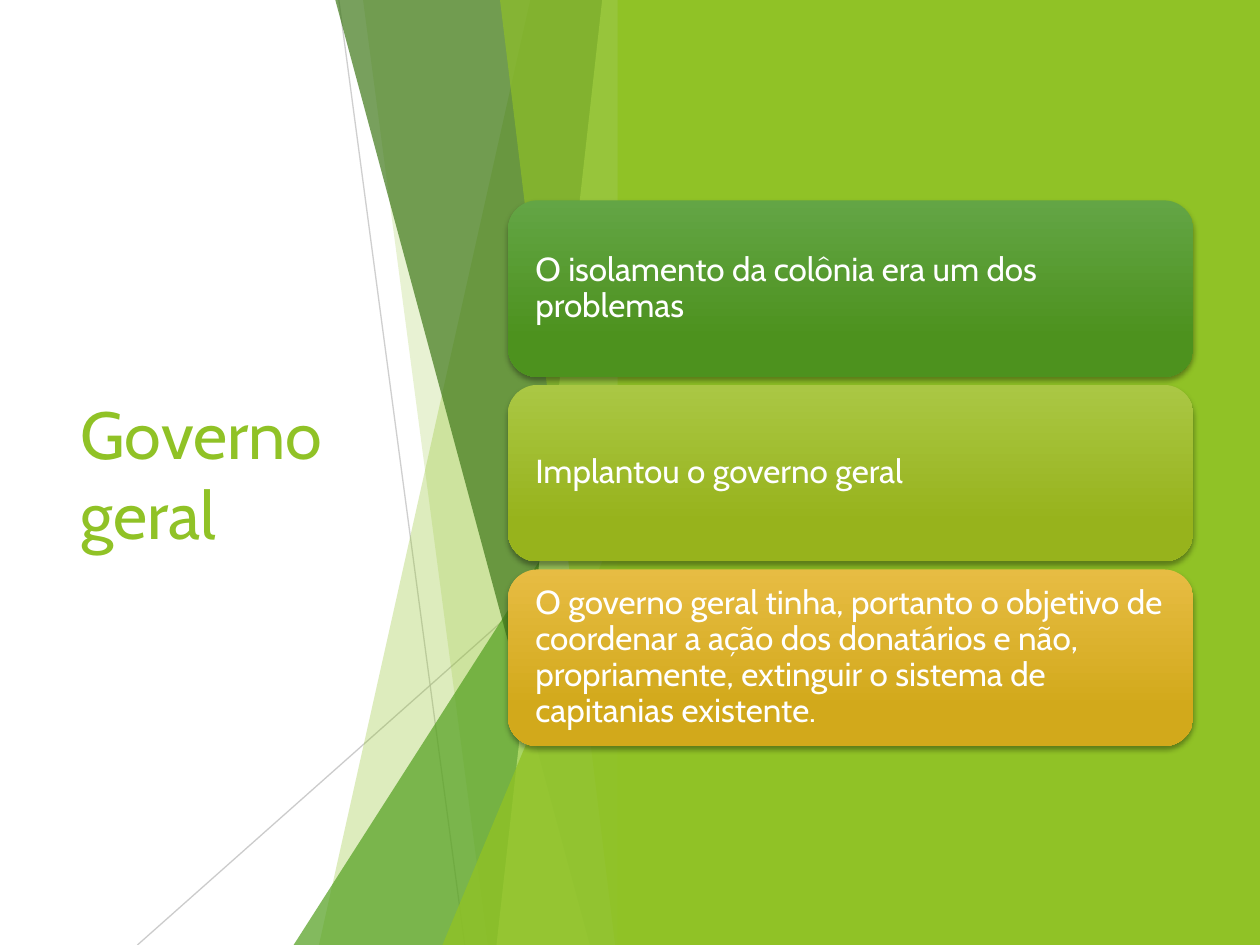
from lxml import etree
from pptx import Presentation
from pptx.dml.color import RGBColor
from pptx.enum.shapes import MSO_CONNECTOR, MSO_SHAPE
from pptx.enum.text import MSO_ANCHOR, MSO_AUTO_SIZE, PP_ALIGN
from pptx.oxml.ns import qn
from pptx.util import Cm, Pt

RECT, ROUND = MSO_SHAPE.RECTANGLE, MSO_SHAPE.ROUNDED_RECTANGLE
WEDGE, LINE = MSO_SHAPE.RIGHT_TRIANGLE, MSO_CONNECTOR.STRAIGHT
WEDGE = MSO_SHAPE.ISOSCELES_TRIANGLE
MIDDLE, LEFT, FIXED = MSO_ANCHOR.MIDDLE, PP_ALIGN.LEFT, MSO_AUTO_SIZE.NONE

WHITE = RGBColor(0xFF, 0xFF, 0xFF)
GREY = RGBColor(0xBF, 0xBF, 0xBF)
LIME = RGBColor(0x90, 0xC2, 0x26)
LEAF = RGBColor(0x54, 0xA0, 0x21)
DARK = RGBColor(0x3F, 0x78, 0x19)
PALE = RGBColor(0xC0, 0xE4, 0x74)
FONT = "Cabin"
WIDE, HIGH, EDGE = 25.4, 19.05, 12.7


def fade(fill, alpha):
    """Make a solid fill (of a shape or a line) see-through; alpha in percent."""
    tint = fill._xPr.find(qn("a:solidFill"))[0]
    etree.SubElement(tint, qn("a:alpha"), val=str(alpha * 1000))


def paint(shape, color, alpha=100):
    shape.shadow.inherit = False
    shape.line.fill.background()
    shape.fill.solid()
    shape.fill.fore_color.rgb = color
    if alpha < 100:
        fade(shape.fill, alpha)


deck = Presentation()
deck.slide_width, deck.slide_height = Cm(WIDE), Cm(HIGH)
slide = deck.slides.add_slide(deck.slide_layouts[5])
shapes = slide.shapes

# Title
title = shapes.title
title.left, title.top, title.width, title.height = Cm(1.37), Cm(3.84), Cm(7.39), Cm(11.38)
title.text = "Governo geral"
frame = title.text_frame
frame.auto_size, frame.vertical_anchor = FIXED, MIDDLE
head = frame.paragraphs[0]
head.alignment = LEFT
font = head.runs[0].font
font.name, font.size, font.color.rgb = FONT, Pt(38), LIME

# Thin lines
for x1, y1, x2, y2, alpha in [(6.83, 0, 9.37, HIGH, 75), (EDGE, 10.24, 2.77, HIGH, 80)]:
    line = shapes.add_connector(LINE, Cm(x1), Cm(y1), Cm(x2), Cm(y2))
    line.line.width = Pt(0.75)
    line.line.color.rgb = GREY
    fade(line.line.fill, alpha)
    etree.SubElement(line._element.spPr, qn("a:effectLst"))

# Facets end at EDGE: a band has its left x at top and bottom,
# a wedge has its left x and its top
FACETS = [
    ("band", 10.69, 6.43, LIME, 30),
    ("band", 7.32, 9.83, LIME, 20),
    ("wedge", 5.92, 8.46, LEAF, 72),
    ("band", 6.76, 11.89, DARK, 70),
    ("band", 12.14, 10.01, PALE, 70),
    ("band", 10.08, 12.4, LIME, 65),
    ("wedge", 8.92, 9.98, LIME, 80),
]
for kind, a, b, color, alpha in FACETS:
    if kind == "band":
        path = shapes.build_freeform(Cm(a), 0)
        path.add_line_segments([(Cm(EDGE), 0), (Cm(EDGE), Cm(HIGH)), (Cm(b), Cm(HIGH))])
        facet = path.convert_to_shape()
    else:
        facet = shapes.add_shape(WEDGE, Cm(a), Cm(b), Cm(EDGE - a), Cm(HIGH - b))
        facet.adjustments[0] = 1
    paint(facet, color, alpha)

panel = shapes.add_shape(RECT, Cm(12.45), 0, Cm(WIDE - 12.45), Cm(HIGH))
paint(panel, LIME)

# Cards
CARDS = [
    ("O isolamento da colônia era um dos problemas",
     RGBColor(0x63, 0xA5, 0x45), RGBColor(0x4D, 0x92, 0x1E)),
    ("Implantou o governo geral",
     RGBColor(0xAA, 0xC7, 0x44), RGBColor(0x97, 0xB3, 0x1C)),
    ("O governo geral tinha, portanto o objetivo de coordenar a ação dos donatários "
     "e não, propriamente, extinguir o sistema de capitanias existente.",
     RGBColor(0xE7, 0xBC, 0x43), RGBColor(0xD2, 0xA9, 0x1B)),
]
FORMAT = {
    "word_wrap": True, "vertical_anchor": MIDDLE,
    "margin_left": Cm(0.38), "margin_right": Cm(0.38),
    "margin_top": Cm(0.38), "margin_bottom": Cm(0.38),
}
SHADOW = {"blurRad": Pt(3), "dist": Pt(2), "dir": 90 * 60000, "algn": "ctr", "rotWithShape": 0}
for row, (text, light, deep) in enumerate(CARDS):
    card = shapes.add_shape(ROUND, Cm(10.24), Cm(4.04 + 3.72 * row), Cm(13.82), Cm(3.56))
    card.line.fill.background()
    card.fill.gradient()
    card.fill.gradient_angle = 270
    for stop, place, color in zip(card.fill.gradient_stops, (0, 0.78), (light, deep)):
        stop.position, stop.color.rgb = place, color

    card.shadow.inherit = False
    effects = card._element.spPr.find(qn("a:effectLst"))
    cast = etree.SubElement(effects, qn("a:outerShdw"), {k: str(v) for k, v in SHADOW.items()})
    black = etree.SubElement(cast, qn("a:srgbClr"), val="000000")
    etree.SubElement(black, qn("a:alpha"), val="35000")

    frame = card.text_frame
    for name, value in FORMAT.items():
        setattr(frame, name, value)
    frame.text = text
    para = frame.paragraphs[0]
    para.alignment, para.line_spacing = LEFT, 0.9
    font = para.runs[0].font
    font.name, font.size, font.color.rgb = FONT, Pt(19), WHITE

deck.save("out.pptx")
